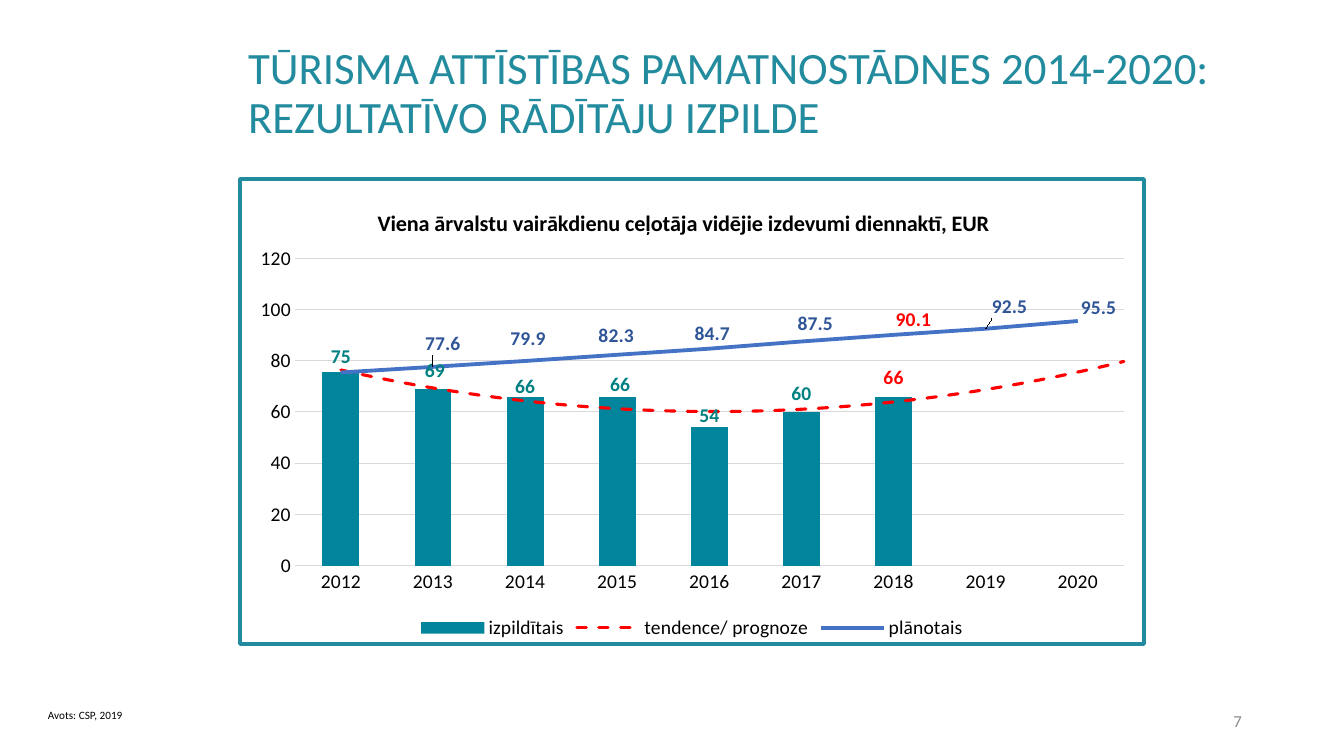
"""Build the slide on daily tourist spending against the planned path."""
from dataclasses import dataclass
from typing import Any

import lxml.etree
import pptx
import pptx.chart.data
import pptx.dml.color
import pptx.enum.chart
import pptx.enum.text
import pptx.oxml
import pptx.oxml.ns
import pptx.util

PX = 914400 / 100.8
FONT = "Calibri"
COLOURS = {"teal": "228B9D", "bar": "01859C", "bar_label": "008080", "plan": "4472C4",
           "plan_label": "2F5597", "red": "FF0000", "grid": "D9D9D9", "grey": "8C8C8C",
           "black": "000000", "white": "FFFFFF"}
CHART_WIDTH, CHART_HEIGHT = 908, 469
ALIGN = pptx.enum.text.PP_ALIGN
ANCHOR = pptx.enum.text.MSO_ANCHOR
TICK = pptx.enum.chart.XL_TICK_MARK
LABEL = pptx.enum.chart.XL_LABEL_POSITION


@dataclass(frozen=True)
class Caption:
    text: str
    left: int
    top: int
    width: int
    height: int
    size: int
    colour: str
    align: Any = ALIGN.LEFT
    anchor: Any = ANCHOR.TOP
    spacing: float = 1.0


@dataclass(frozen=True)
class Measure:
    name: str
    values: tuple
    number_format: str
    label_colour: str
    label_position: Any
    label_shifts: dict


HEADING = Caption("TŪRISMA ATTĪSTĪBAS PAMATNOSTĀDNES 2014-2020:\vREZULTATĪVO RĀDĪTĀJU IZPILDE",
                  238, 2, 1098, 146, 32, "teal", anchor=ANCHOR.BOTTOM, spacing=0.9)
FOOTERS = (
    Caption("7", 950, 701, 302, 40, 12, "grey", ALIGN.RIGHT, ANCHOR.MIDDLE),
    Caption("Avots: CSP, 2019", 38, 703, 161, 24, 8, "black"),
)
MEASURES = (
    Measure("izpildītais", (75.4, 69, 66, 66, 54, 60, 66, None, None), "0",
            "bar_label", LABEL.OUTSIDE_END,
            {0: (0, 0), 1: (2, -2), 2: (0, 6), 3: (3, 4), 4: (0, 4), 5: (0, -2), 6: (0, -3)}),
    Measure("plānotais", (75.4, 77.6, 79.9, 82.3, 84.7, 87.5, 90.1, 92.5, 95.5), "0.0",
            "plan_label", LABEL.ABOVE,
            {1: (10, -7), 2: (3, -6), 3: (-1, -3), 4: (3, 1), 5: (14, -2), 6: (20, 1),
             7: (24, -6), 8: (21, 3)}),
)
RED_POINT = 6


def px(count: int) -> int:
    return round(count * PX)


def rgb(name: str) -> pptx.dml.color.RGBColor:
    return pptx.dml.color.RGBColor.from_string(COLOURS[name])


def assign(target: Any, **values: Any) -> None:
    for key, value in values.items():
        setattr(target, key, value)


def style_font(font: Any, size: int, colour: str, bold: bool = False) -> None:
    assign(font, name=FONT, size=pptx.util.Pt(size), bold=bold)
    font.color.rgb = rgb(colour)


def style_line(line: Any, colour: str, width: float) -> None:
    line.color.rgb = rgb(colour)
    line.width = pptx.util.Pt(width)


def parse_xml(markup: str) -> Any:
    names = pptx.oxml.ns.nsdecls("c", "a")
    return pptx.oxml.parse_xml(markup.replace(">", f" {names}>", 1))


def write_caption(box: Any, caption: Caption) -> None:
    assign(box, left=px(caption.left), top=px(caption.top),
           width=px(caption.width), height=px(caption.height))
    frame = box.text_frame
    assign(frame, text=caption.text, word_wrap=True, vertical_anchor=caption.anchor,
           auto_size=pptx.enum.text.MSO_AUTO_SIZE.NONE)
    para = frame.paragraphs[0]
    assign(para, alignment=caption.align, line_spacing=caption.spacing)
    for span in para.runs:
        style_font(span.font, caption.size, caption.colour)


def place(parent: Any, index: int, left: int, top: int, width: int = 0, height: int = 0,
          edge: bool = False) -> None:
    for old in parent.xpath("./c:layout"):
        parent.remove(old)
    parts = '<c:layoutTarget val="inner"/>' if width else ""
    if edge:
        parts += '<c:xMode val="edge"/><c:yMode val="edge"/>'
    sizes = {"x": left / CHART_WIDTH, "y": top / CHART_HEIGHT}
    if width:
        sizes |= {"w": width / CHART_WIDTH, "h": height / CHART_HEIGHT}
    parts += "".join(f'<c:{key} val="{value:.4f}"/>' for key, value in sizes.items())
    parent.insert(index, parse_xml(
        f"<c:layout><c:manualLayout>{parts}</c:manualLayout></c:layout>"))


def move_plan_to_line(chart: Any) -> None:
    bars = chart.element.xpath(".//c:barChart")[0]
    plan = bars.xpath("./c:ser")[1]
    for flag in plan.xpath("./c:invertIfNegative"):
        plan.remove(flag)
    axes = "".join(f'<c:axId val="{axis.get("val")}"/>' for axis in bars.xpath("./c:axId"))
    lines = parse_xml('<c:lineChart><c:grouping val="standard"/><c:varyColors val="0"/>'
                      f'<c:marker val="1"/>{axes}</c:lineChart>')
    lines.insert(2, plan)
    bars.addnext(lines)


def label_points(chart: Any, index: int, measure: Measure) -> None:
    series = chart.plots[index].series[0]
    series.data_labels.show_value = False
    for number in measure.label_shifts:
        label = series.points[number].data_label
        red = number == RED_POINT
        style_font(label.font, 14, "red" if red else measure.label_colour, True)
        label.position = measure.label_position
    for node in chart.element.xpath(".//c:ser")[index].xpath("./c:dLbls/c:dLbl"):
        number = int(node.xpath("./c:idx")[0].get("val"))
        place(node, 1, *measure.label_shifts[number])
        node.insert(2, parse_xml(
            f'<c:numFmt formatCode="{measure.number_format}" sourceLinked="0"></c:numFmt>'))


def add_trend(chart: Any) -> None:
    category = chart.element.xpath(".//c:barChart/c:ser/c:cat")[0]
    category.addprevious(parse_xml(
        "<c:trendline><c:name>tendence/ prognoze</c:name>"
        '<c:spPr><a:ln w="28575" cap="rnd"><a:solidFill>'
        f'<a:srgbClr val="{COLOURS["red"]}"/></a:solidFill><a:prstDash val="dash"/></a:ln></c:spPr>'
        '<c:trendlineType val="poly"/><c:order val="2"/><c:forward val="2"/>'
        '<c:dispRSqr val="0"/><c:dispEq val="0"/></c:trendline>'))


def style_frame(chart: Any) -> None:
    style_font(chart.font, 14, "black")
    chart.has_title = True
    frame = chart.chart_title.text_frame
    frame.text = "Viena ārvalstu vairākdienu ceļotāja vidējie izdevumi diennaktī, EUR"
    style_font(frame.paragraphs[0].runs[0].font, 16, "black", True)
    place(chart.element.xpath("./c:chart/c:title")[0], 1, 134, 25, edge=True)
    place(chart.element.xpath(".//c:plotArea")[0], 0, 55, 80, 833, 310, edge=True)
    chart.has_legend = True
    assign(chart.legend, position=pptx.enum.chart.XL_LEGEND_POSITION.BOTTOM,
           include_in_layout=False)
    style_font(chart.legend.font, 14, "black")
    for axis in (chart.category_axis, chart.value_axis):
        assign(axis, major_tick_mark=TICK.NONE, minor_tick_mark=TICK.NONE)
        style_font(axis.tick_labels.font, 14, "black")
    style_line(chart.category_axis.format.line, "grid", 1)
    values = chart.value_axis
    assign(values, minimum_scale=0, maximum_scale=120, major_unit=20)
    assign(values.tick_labels, number_format="#,##0", number_format_is_linked=False)
    values.format.line.fill.background()
    style_line(values.major_gridlines.format.line, "grid", 0.75)
    chart.element.xpath("./c:chart")[0].addnext(parse_xml(
        f'<c:spPr><a:solidFill><a:srgbClr val="{COLOURS["white"]}"/></a:solidFill>'
        f'<a:ln w="38100"><a:solidFill><a:srgbClr val="{COLOURS["teal"]}"/></a:solidFill>'
        "<a:round/></a:ln></c:spPr>"))


def add_spending_chart(page: Any) -> None:
    data = pptx.chart.data.CategoryChartData()
    data.categories = [str(year) for year in range(2012, 2021)]
    for measure in MEASURES:
        data.add_series(measure.name, measure.values, measure.number_format)
    chart = page.shapes.add_chart(pptx.enum.chart.XL_CHART_TYPE.COLUMN_CLUSTERED, px(238),
                                  px(177), px(CHART_WIDTH), px(CHART_HEIGHT), data).chart
    move_plan_to_line(chart)
    style_frame(chart)
    bars, lines = chart.plots
    assign(bars, gap_width=150, vary_by_categories=False)
    bars.series[0].format.fill.solid()
    bars.series[0].format.fill.fore_color.rgb = rgb("bar")
    plan = lines.series[0]
    style_line(plan.format.line, "plan", 2.75)
    plan.smooth = False
    plan.marker.style = pptx.enum.chart.XL_MARKER_STYLE.NONE
    for index, measure in enumerate(MEASURES):
        label_points(chart, index, measure)
    add_trend(chart)


def main() -> None:
    deck = pptx.Presentation()
    assign(deck, slide_width=px(1344), slide_height=px(756))
    page = deck.slides.add_slide(deck.slide_layouts[5])
    write_caption(page.shapes.title, HEADING)
    add_spending_chart(page)
    for caption in FOOTERS:
        write_caption(page.shapes.add_textbox(0, 0, 0, 0), caption)
    deck.save("out.pptx")


if __name__ == "__main__":
    main()
